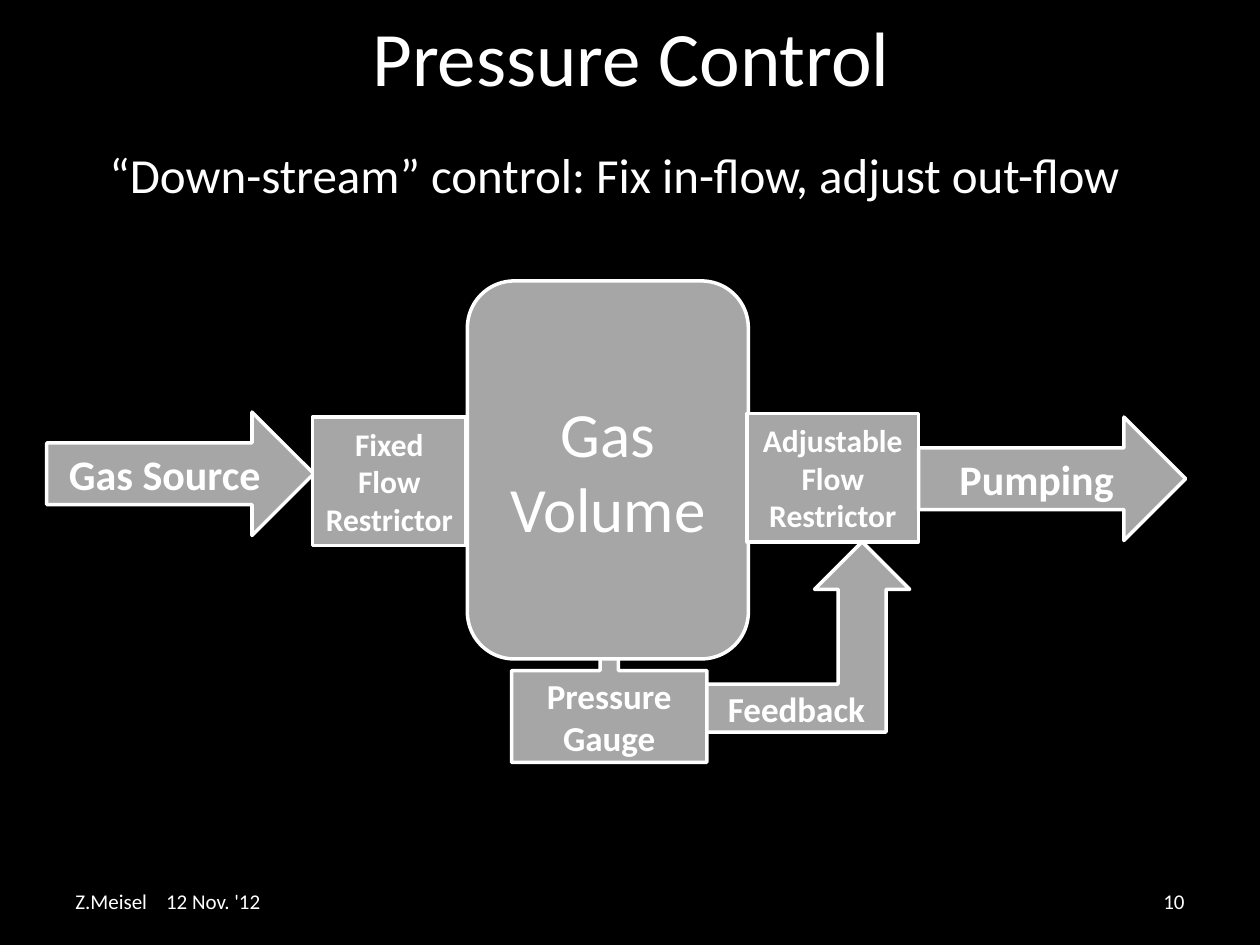
from lxml import etree
from pptx import Presentation
from pptx.dml.color import RGBColor
from pptx.enum.shapes import MSO_SHAPE
from pptx.enum.text import MSO_ANCHOR, PP_ALIGN
from pptx.oxml.ns import qn
from pptx.util import Inches, Pt

LEFT, CENTER, RIGHT = PP_ALIGN.LEFT, PP_ALIGN.CENTER, PP_ALIGN.RIGHT
TOP, MIDDLE = MSO_ANCHOR.TOP, MSO_ANCHOR.MIDDLE
RECTANGLE, ROUNDED = MSO_SHAPE.RECTANGLE, MSO_SHAPE.ROUNDED_RECTANGLE
RIGHT_ARROW, BENT_ARROW = MSO_SHAPE.RIGHT_ARROW, MSO_SHAPE.BENT_UP_ARROW
CALLOUT = MSO_SHAPE.UP_ARROW_CALLOUT

BLACK, WHITE, GRAY = "000000", "FFFFFF", "A6A6A6"
FONT = "Calibri"

TITLE = "Pressure Control"
TITLE_BOX = (0.51, 0, 9, 0.89)
LABELS = [
    ("“Down-stream” control: Fix in-flow, adjust out-flow",
     (0.77, 1.1, 8.43, 0.83), dict(size=28, anchor=TOP)),
    ("Z.Meisel\t12 Nov. '12", (0.5, 6.95, 2.33, 0.4), dict(size=12, tab=0.72)),
    ("10", (7.17, 6.95, 2.33, 0.4), dict(size=12, align=RIGHT)),
]
ARROW_SIZE = (2.12, 0.98)
PARTS = [
    (CALLOUT, "Pressure Gauge", (4.06, 4.93, 1.55, 1.12), 20, True,
     (0.129, 0.25, 0.25, 0.65)),
    (ROUNDED, "Gas Volume", (3.71, 2.23, 2.23, 3), 36, False, ()),
    (RIGHT_ARROW, "Gas Source", (0.37, 3.27, *ARROW_SIZE), 24, True, ()),
    (RECTANGLE, "Fixed\nFlow\nRestrictor", (2.48, 3.31, 1.22, 1.02), 18, True, ()),
    (RECTANGLE, "Adjustable\nFlow\nRestrictor", (5.93, 3.28, 1.36, 1.02), 18, True, ()),
    (RIGHT_ARROW, "Pumping", (7.29, 3.31, *ARROW_SIZE), 24, True, ()),
    (BENT_ARROW, "Feedback", (5.61, 4.3, 1.61, 1.51), 20, True,
     (0.252, 0.25, 0.25)),
]


def color(value):
    return RGBColor.from_string(value)


def inches(box):
    return [Inches(length) for length in box]


def write(shape, text, size, bold=False, align=LEFT, anchor=MIDDLE, margin=0.1, tab=None):
    frame = shape.text_frame
    frame.word_wrap = True
    frame.vertical_anchor = anchor
    frame.margin_left = frame.margin_right = Inches(margin)
    frame.text = text
    for paragraph in frame.paragraphs:
        paragraph.alignment = align
        if tab:
            properties = paragraph._p.get_or_add_pPr()
            tabs = etree.SubElement(properties, qn("a:tabLst"))
            etree.SubElement(tabs, qn("a:tab"), pos=str(Inches(tab)), algn="l")
        font = paragraph.font
        font.name, font.size, font.bold = FONT, Pt(size), bold
        font.color.rgb = color(WHITE)


def add_part(slide, kind, text, box, size, bold, adjustments):
    shape = slide.shapes.add_shape(kind, *inches(box))
    shape.shadow.inherit = False
    shape.fill.solid()
    shape.fill.fore_color.rgb = color(GRAY)
    shape.line.color.rgb = color(WHITE)
    shape.line.width = Pt(2)
    for index, value in enumerate(adjustments):
        shape.adjustments[index] = value
    write(shape, text, size, bold=bold, align=CENTER, margin=0.05)


def main():
    presentation = Presentation()
    presentation.slide_width, presentation.slide_height = Inches(10), Inches(7.5)
    slide = presentation.slides.add_slide(presentation.slide_layouts[5])
    slide.background.fill.solid()
    slide.background.fill.fore_color.rgb = color(BLACK)

    title = slide.shapes.title
    title.left, title.top, title.width, title.height = inches(TITLE_BOX)
    write(title, TITLE, 44, align=CENTER)

    for text, box, style in LABELS:
        write(slide.shapes.add_textbox(*inches(box)), text, **style)
    for part in PARTS:
        add_part(slide, *part)

    presentation.save("out.pptx")


if __name__ == "__main__":
    main()
